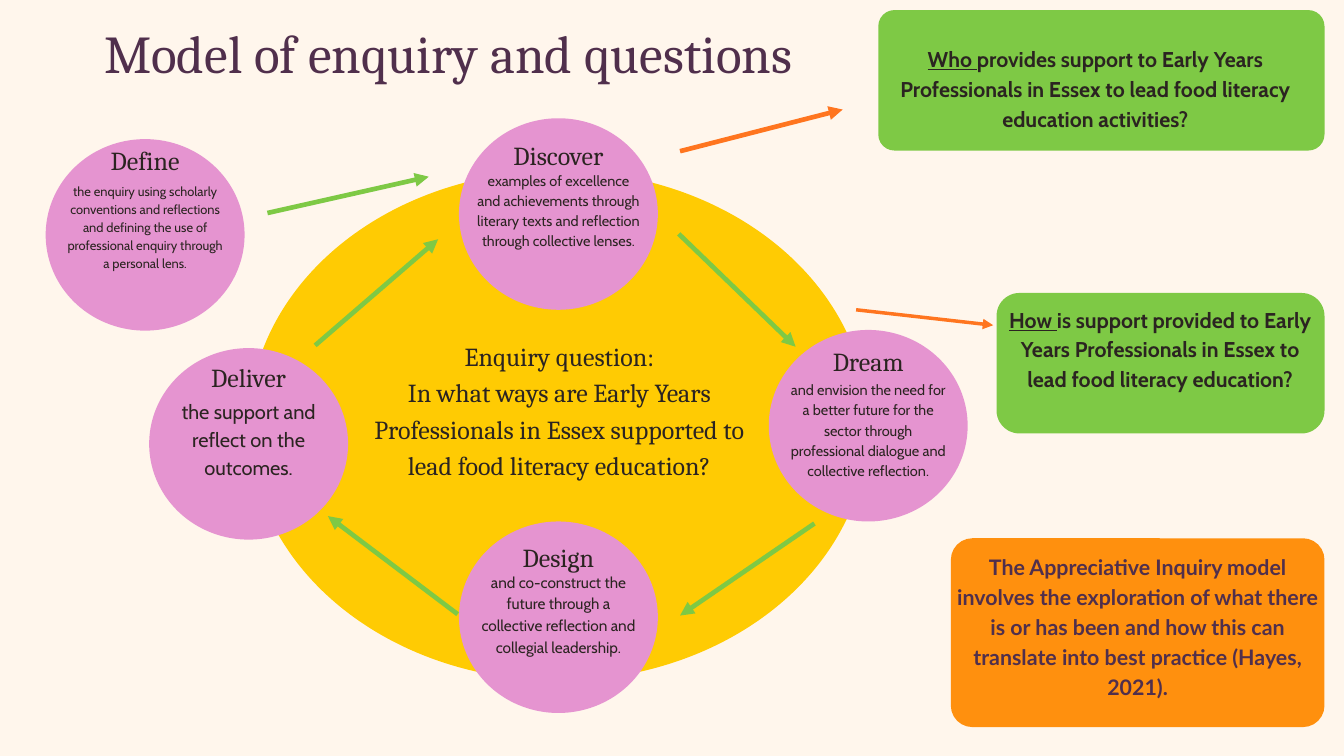
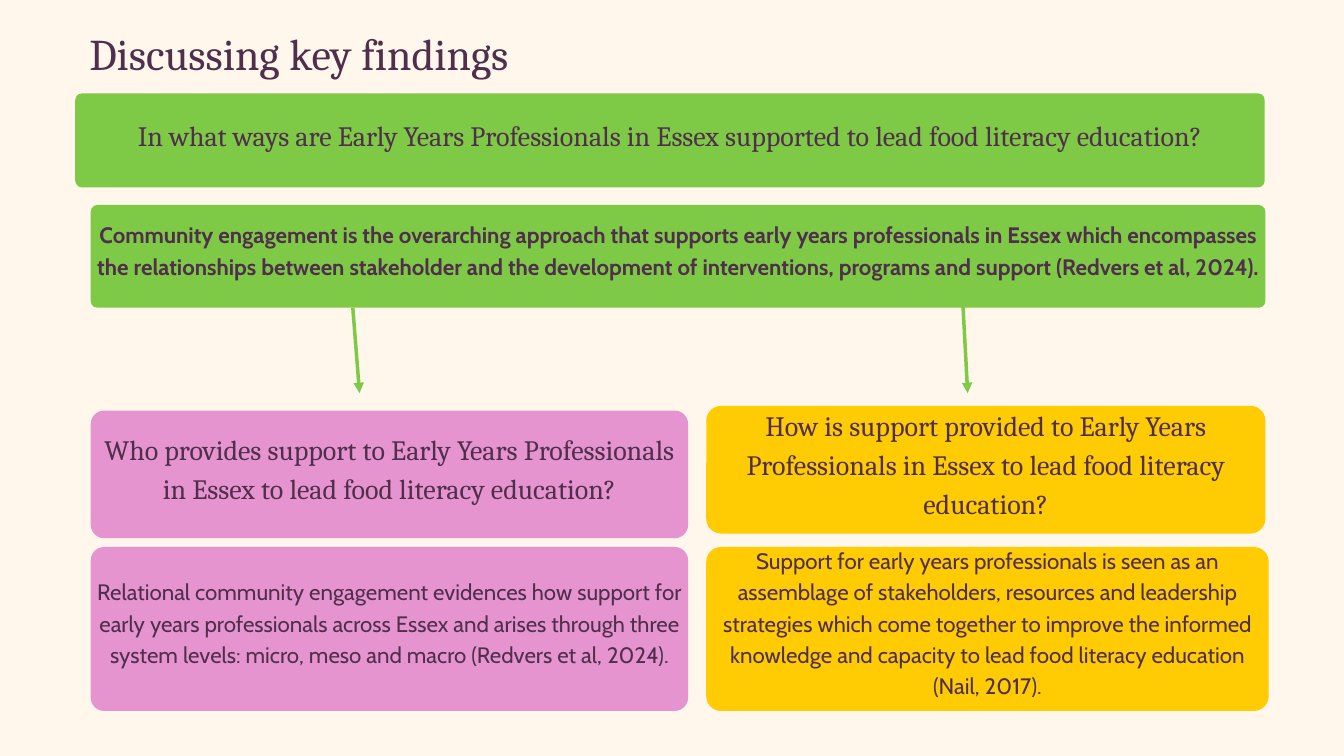
from dataclasses import dataclass

from lxml import etree
from pptx import Presentation
from pptx.dml.color import RGBColor
from pptx.enum.shapes import MSO_CONNECTOR, MSO_SHAPE
from pptx.enum.text import MSO_ANCHOR, PP_ALIGN
from pptx.oxml.ns import qn
from pptx.util import Inches, Pt

OVAL = MSO_SHAPE.OVAL
ROUNDED = MSO_SHAPE.ROUNDED_RECTANGLE
STRAIGHT = MSO_CONNECTOR.STRAIGHT
TOP = MSO_ANCHOR.TOP
MIDDLE = MSO_ANCHOR.MIDDLE
CENTER = PP_ALIGN.CENTER


@dataclass(frozen=True)
class Theme:
    cream: str = "FFF6EC"
    yellow: str = "FFCB03"
    pink: str = "E594D0"
    green: str = "7EC945"
    orange: str = "FF900E"
    arrow_orange: str = "FF751F"
    plum: str = "502F4C"
    ink: str = "2B2421"
    serif: str = "Cambria"
    sans: str = "Cabin"
    note_font: str = "Lato"
    model_title: float = 57
    findings_title: float = 47
    question: float = 30
    stage: float = 27.8
    finding: float = 23.9
    callout: float = 22.9
    stage_large: float = 21.5
    stage_medium: float = 16.5
    stage_small: float = 15.5
    stage_tiny: float = 13.8
    line_factor: float = 1.4


theme = Theme()


def add_text(slide, box, text, *, size, font=theme.serif, color=theme.plum,
             bold=False, underlined="", anchor=TOP, inset=0):
    text_box = slide.shapes.add_textbox(*[Inches(length) for length in box])
    frame = text_box.text_frame
    frame.word_wrap = True
    frame.vertical_anchor = anchor
    frame.margin_left = frame.margin_right = Inches(inset)
    frame.margin_top = frame.margin_bottom = Inches(inset)
    for index, line in enumerate(text.split("\n")):
        paragraph = frame.paragraphs[0] if index == 0 else frame.add_paragraph()
        paragraph.alignment = CENTER
        paragraph.line_spacing = Pt(round(size * theme.line_factor, 1))
        for content, underline in ((underlined, True), (line, False)):
            if content:
                run = paragraph.add_run()
                run.text = content
                run.font.name = font
                run.font.size = Pt(size)
                run.font.bold = bold
                run.font.underline = underline
                run.font.color.rgb = RGBColor.from_string(color)


def add_filled(slide, kind, box, color, radius=0):
    shape = slide.shapes.add_shape(kind, *[Inches(length) for length in box])
    shape.shadow.inherit = False
    shape.fill.solid()
    shape.fill.fore_color.rgb = RGBColor.from_string(color)
    shape.line.fill.background()
    if radius:
        shape.adjustments[0] = radius / min(box[2:])


presentation = Presentation()
presentation.slide_width = Inches(20)
presentation.slide_height = Inches(11.25)
blank_layout = presentation.slide_layouts[6]
model_slide = presentation.slides.add_slide(blank_layout)
findings_slide = presentation.slides.add_slide(blank_layout)

titles = [
    (model_slide, (0.67, 0.15, 12, 1.05), "Model of enquiry and questions", theme.model_title),
    (findings_slide, (0.45, 0.26, 8, 0.87), "Discussing key findings", theme.findings_title),
]
for slide, box, title, size in titles:
    slide.background.fill.solid()
    slide.background.fill.fore_color.rgb = RGBColor.from_string(theme.cream)
    add_text(slide, box, title, size=size)

add_filled(model_slide, OVAL, (3.7, 2.54, 9.22, 7.59), theme.yellow)
add_text(
    model_slide, (5.32, 4.99, 6.01, 2.09),
    "Enquiry question:\nIn what ways are Early Years Professionals in Essex "
    "supported to lead food literacy education?",
    size=theme.stage, color=theme.ink)

circle_width, circle_height = 2.96, 2.85
body_width = 2.44
stages = [
    ("Define", 0.68, 2.07, 2.08, 2.7, theme.stage_tiny,
     "the enquiry using scholarly conventions and reflections and defining "
     "the use of professional enquiry through a personal lens."),
    ("Discover", 6.83, 1.76, 2, 2.51, theme.stage_small,
     "examples of excellence and achievements through literary texts and "
     "reflection through collective lenses."),
    ("Dream", 11.44, 4.91, 5.06, 5.63, theme.stage_small,
     "and envision the need for a better future for the sector through "
     "professional dialogue and collective reflection."),
    ("Design", 6.83, 7.76, 7.98, 8.48, theme.stage_medium,
     "and co-construct the future through a collective reflection and "
     "collegial leadership."),
    ("Deliver", 2.22, 5.18, 5.31, 5.88, theme.stage_large,
     "the support and reflect on the outcomes."),
]
for name, left, top, name_top, body_top, body_size, body in stages:
    add_filled(model_slide, OVAL, (left, top, circle_width, circle_height), theme.pink)
    add_text(model_slide, (left, name_top, circle_width, 0.5), name,
             size=theme.stage, color=theme.ink)
    body_left = left + (circle_width - body_width) / 2
    add_text(model_slide, (body_left, body_top, body_width, top + circle_height - body_top),
             body, size=body_size, font=theme.sans, color=theme.ink)

callouts = [
    ((13.07, 0.15, 6.64, 2.09), 0.24, (13.07, 0.62, 6.46, 1.6), "Who ",
     "provides support to Early Years Professionals in Essex to lead food "
     "literacy education activities?"),
    ((14.83, 4.36, 4.88, 2.09), 0.34, (15.01, 4.5, 4.51, 1.9), "How ",
     "is support provided to Early Years Professionals in Essex to lead food "
     "literacy education?"),
]
for box, radius, text_area, question_word, question in callouts:
    add_filled(model_slide, ROUNDED, box, theme.green, radius)
    add_text(model_slide, text_area, question, size=theme.callout, font=theme.sans,
             color=theme.ink, bold=True, underlined=question_word)

question_format = {"size": theme.question}
finding_format = {"size": theme.finding, "font": theme.sans}
panels = [
    (model_slide, (14.15, 8.01, 5.56, 2.81), theme.orange, 0.32,
     "The Appreciative Inquiry model involves the exploration of what there is "
     "or has been and how this can translate into best practice (Hayes, 2021).",
     {"size": theme.callout, "font": theme.note_font, "bold": True}),
    (findings_slide, (1.12, 1.39, 17.7, 1.4), theme.green, 0.1,
     "In what ways are Early Years Professionals in Essex supported to lead "
     "food literacy education?", question_format),
    (findings_slide, (1.35, 3.05, 17.48, 1.53), theme.green, 0.1,
     "Community engagement is the overarching approach that supports early "
     "years professionals in Essex which encompasses the relationships between "
     "stakeholder and the development of interventions, programs and support "
     "(Redvers et al, 2024).", {**finding_format, "bold": True}),
    (findings_slide, (1.35, 6.11, 8.89, 1.9), theme.pink, 0.2,
     "Who provides support to Early Years Professionals in Essex to lead food "
     "literacy education?", question_format),
    (findings_slide, (10.51, 6.04, 8.32, 1.9), theme.yellow, 0.22,
     "How is support provided to Early Years Professionals in Essex to lead "
     "food literacy education?", question_format),
    (findings_slide, (1.35, 8.14, 8.89, 2.44), theme.pink, 0.2,
     "Relational community engagement evidences how support for early years "
     "professionals across Essex and arises through three system levels: "
     "micro, meso and macro (Redvers et al, 2024).", finding_format),
    (findings_slide, (10.51, 8.14, 8.37, 2.44), theme.yellow, 0.22,
     "Support for early years professionals is seen as an assemblage of "
     "stakeholders, resources and leadership strategies which come together to "
     "improve the informed knowledge and capacity to lead food literacy "
     "education (Nail, 2017).", finding_format),
]
text_lift = 0.24
for slide, box, color, radius, text, text_format in panels:
    left, top, width, height = box
    add_filled(slide, ROUNDED, box, color, radius)
    add_text(slide, (left, top - text_lift, width, height + text_lift), text,
             anchor=MIDDLE, inset=0.06, **text_format)

arrows = [
    (model_slide, (3.98, 3.17, 6.38, 2.63), theme.green, 5),
    (model_slide, (10.1, 3.48, 11.84, 5.16), theme.green, 5),
    (model_slide, (12.12, 7.79, 10.12, 9.16), theme.green, 5),
    (model_slide, (6.81, 9.14, 4.88, 7.68), theme.green, 5),
    (model_slide, (4.69, 5.14, 6.52, 3.56), theme.green, 5),
    (model_slide, (10.12, 2.25, 12.54, 1.63), theme.arrow_orange, 5),
    (model_slide, (12.74, 4.61, 14.78, 4.84), theme.arrow_orange, 3.75),
    (findings_slide, (5.25, 4.58, 5.35, 5.85), theme.green, 3.75),
    (findings_slide, (14.32, 4.36, 14.4, 5.85), theme.green, 3.75),
]
for slide, ends, color, width in arrows:
    arrow = slide.shapes.add_connector(STRAIGHT, *[Inches(length) for length in ends])
    arrow.line.width = Pt(width)
    arrow.line.color.rgb = RGBColor.from_string(color)
    properties = arrow._element.spPr
    etree.SubElement(properties.find(qn("a:ln")), qn("a:tailEnd"), type="triangle")
    etree.SubElement(properties, qn("a:effectLst"))

presentation.save("out.pptx")
